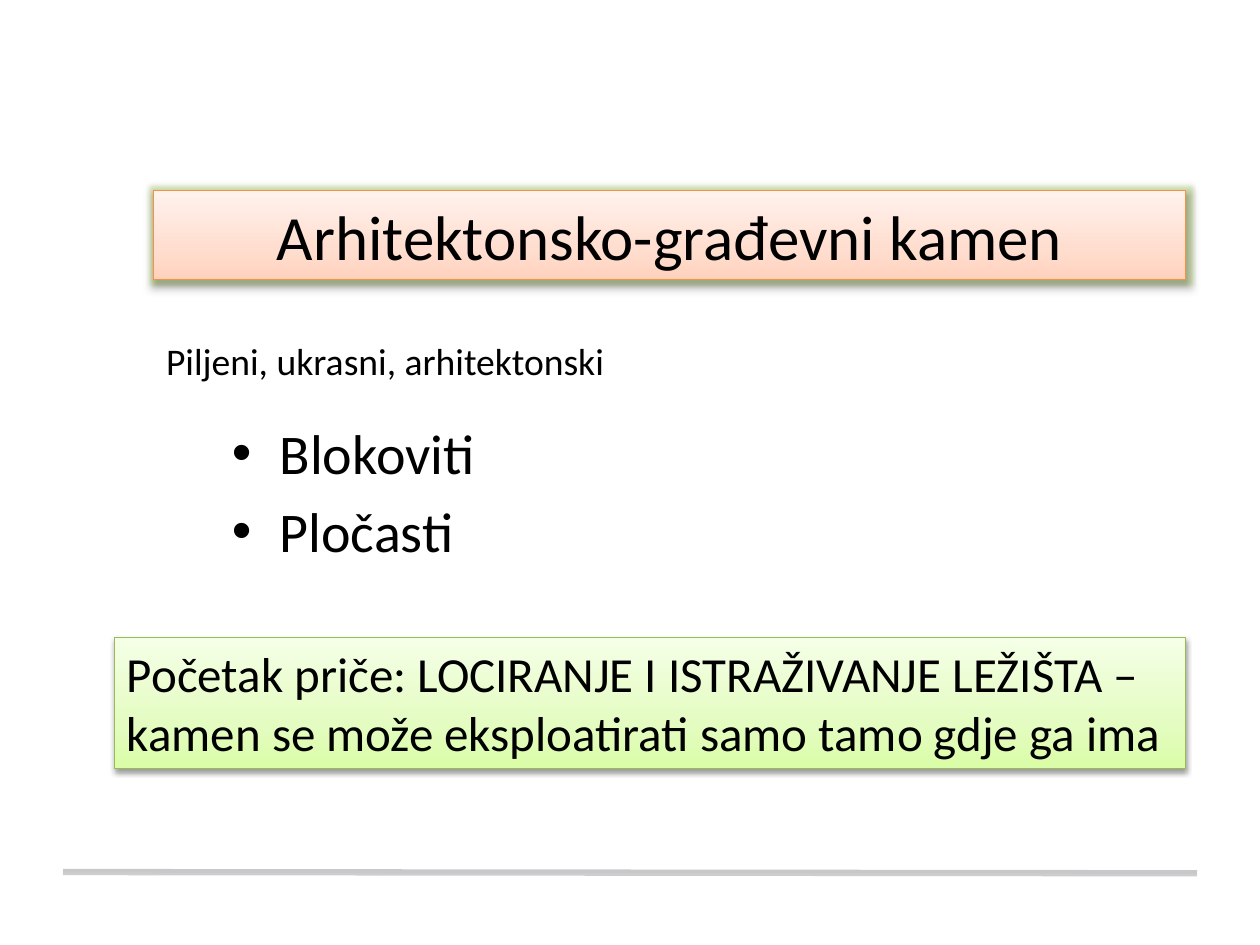
from copy import deepcopy

from lxml import etree
from pptx import Presentation
from pptx.dml.color import RGBColor
from pptx.enum import shapes, text
from pptx.oxml import ns
from pptx.util import Inches, Pt

COLOURS = {
    "text": "000000", "rule": "C7C8CA", "rule_shadow": "808080", "shadow": "000000",
    "glow": "9BBB59", "title_line": "F69240", "message_line": "98B955",
}
GRADIENTS = {
    "title": [(0, "FFD2BD"), (0.35, "FFDED0"), (1, "FFF2ED")],
    "message": [(0, "DAFDA7"), (0.35, "E4FCC2"), (1, "F5FFE7")],
}


def rgb(name):
    """Return the named colour."""
    return RGBColor.from_string(COLOURS[name])


def add_child(parent, tag, **attributes):
    """Append a DrawingML element with the given attributes."""
    values = {key: str(value) for key, value in attributes.items()}
    return etree.SubElement(parent, ns.qn(f"a:{tag}"), values)


def add_effects(element, shadow, blur=0, glow=None):
    """Give an element a downward shadow and, if named, a glow."""
    properties = element.spPr
    effects = properties.find(ns.qn("a:effectLst"))
    if effects is None:
        effects = add_child(properties, "effectLst")
    parts = [("glow", glow, {"rad": Pt(5)}, 40000)] if glow else []
    parts.append(("outerShdw", shadow,
                  {"blurRad": Pt(blur), "dist": Pt(1.6), "dir": 5400000, "rotWithShape": 0}, 38000))
    for tag, colour, attributes, alpha in parts:
        effect = add_child(effects, tag, **attributes)
        add_child(add_child(effect, "srgbClr", val=COLOURS[colour]), "alpha", val=alpha)


def place(shape, left, top, width, height):
    """Set the position and size in inches."""
    box = {"left": left, "top": top, "width": width, "height": height}
    for name, value in box.items():
        setattr(shape, name, Inches(value))


def style_panel(panel, kind, glow=None):
    """Apply the gradient, outline and shadow of a panel."""
    panel.fill.gradient()
    panel.fill.gradient_angle = 90
    stop_list = panel._element.spPr.find(".//" + ns.qn("a:gsLst"))
    stop_list.insert(1, deepcopy(stop_list[0]))
    for stop, (position, colour) in zip(panel.fill.gradient_stops, GRADIENTS[kind]):
        stop.position = position
        stop.color.rgb = RGBColor.from_string(colour)
    panel.line.color.rgb = rgb(f"{kind}_line")
    panel.line.width = Pt(0.75)
    panel.shadow.inherit = False
    add_effects(panel._element, "shadow", blur=3.1, glow=glow)


def write(shape, lines, size, align=text.PP_ALIGN.LEFT, bullet=False, **frame_format):
    """Fill a shape with paragraphs in one format."""
    frame = shape.text_frame
    frame_values = {"word_wrap": True, "auto_size": text.MSO_AUTO_SIZE.NONE, **frame_format}
    for name, value in frame_values.items():
        setattr(frame, name, value)
    for index, line in enumerate(lines):
        paragraph = frame.paragraphs[0] if index == 0 else frame.add_paragraph()
        paragraph.text = line
        paragraph.alignment = align
        if index:
            paragraph.space_before = Pt(size * 0.2)
        if bullet:
            properties = paragraph._p.get_or_add_pPr()
            properties.set("marL", str(Inches(0.38)))
            properties.set("indent", str(Inches(-0.38)))
            add_child(properties, "buFont", typeface="Arial")
            add_child(properties, "buChar", char="•")
        font_values = {"name": "Calibri", "size": Pt(size), "bold": False}
        for name, value in font_values.items():
            setattr(paragraph.font, name, value)
        paragraph.font.color.rgb = rgb("text")


def add_rule(slide):
    """Draw the line at the foot of the slide."""
    rule = slide.shapes.add_connector(
        shapes.MSO_CONNECTOR.STRAIGHT, Inches(0.5), Inches(6.91), Inches(9.5), Inches(6.92))
    rule.line.color.rgb = rgb("rule")
    rule.line.width = Pt(2)
    add_effects(rule._element, "rule_shadow")


def add_title(slide, insets):
    """Format the title placeholder as a glowing panel."""
    title = slide.shapes.title
    place(title, 1.22, 1.51, 8.19, 0.71)
    style_panel(title, "title", glow="glow")
    write(title, ["Arhitektonsko-građevni kamen"], 36, text.PP_ALIGN.CENTER,
          vertical_anchor=text.MSO_ANCHOR.MIDDLE, **insets)


def add_text(slide, box, lines, size, **options):
    """Add a text box."""
    label = slide.shapes.add_textbox(*map(Inches, box))
    write(label, lines, size, **options)


def add_message(slide):
    """Add the green panel with the closing message."""
    message = slide.shapes.add_shape(
        shapes.MSO_SHAPE.RECTANGLE, *map(Inches, (0.91, 5.06, 8.5, 1.04)))
    style_panel(message, "message")
    write(message, ["Početak priče: LOCIRANJE I ISTRAŽIVANJE LEŽIŠTA – "
                    "kamen se može eksploatirati samo tamo gdje ga ima"], 28,
          vertical_anchor=text.MSO_ANCHOR.TOP)


def main():
    """Build and save the slide."""
    deck = Presentation()
    deck.slide_width, deck.slide_height = Inches(10), Inches(7.5)
    slide = deck.slides.add_slide(deck.slide_layouts[5])
    insets = {"margin_left": Inches(0.07), "margin_right": Inches(0.07),
              "margin_top": Inches(0.04), "margin_bottom": Inches(0.04)}
    add_rule(slide)
    add_title(slide, insets)
    add_text(slide, (1.77, 3.28, 2.44, 1.42), ["Blokoviti", "Pločasti"], 32, bullet=True, **insets)
    add_text(slide, (1.22, 2.49, 7.64, 0.56), ["Piljeni, ukrasni, arhitektonski"], 21.5,
             margin_top=Inches(0.19), margin_bottom=0)
    add_message(slide)
    deck.save("out.pptx")


if __name__ == "__main__":
    main()
